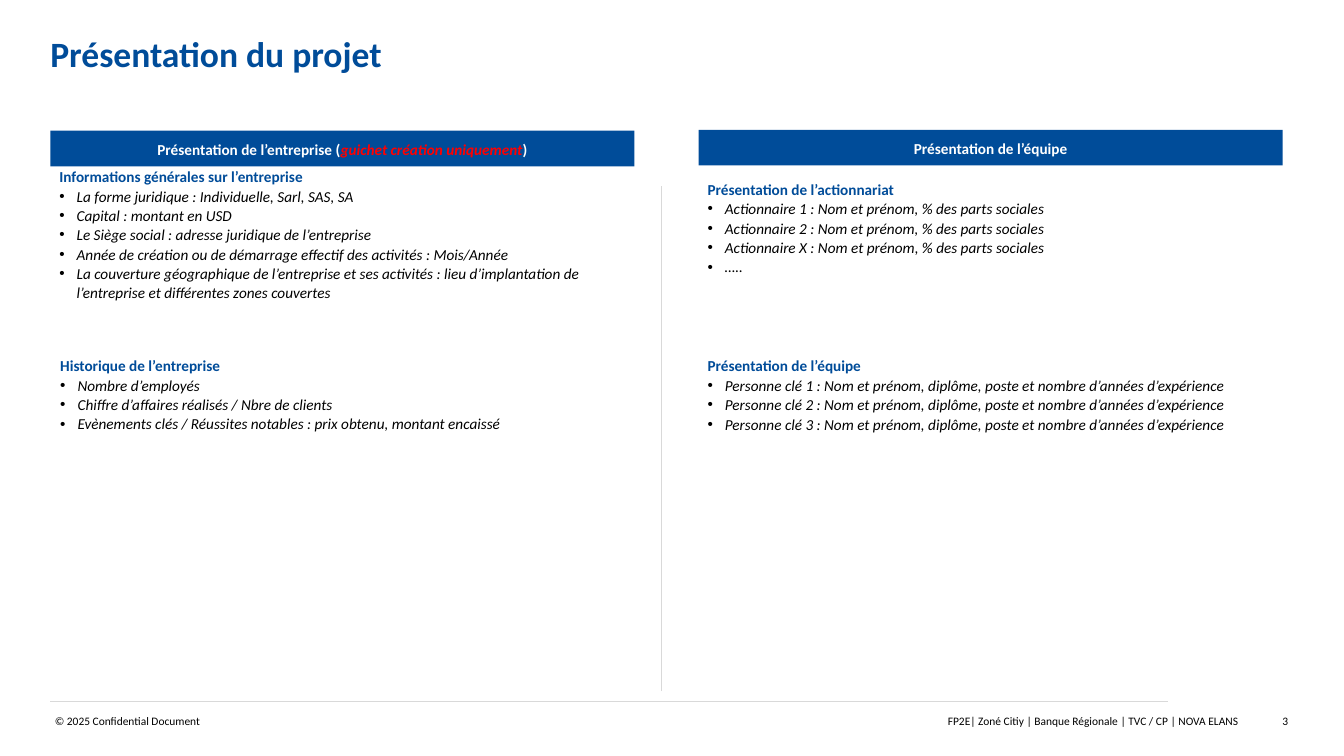
"""Build the project presentation slide: company on the left, team on the right."""
from lxml import etree
from pptx import Presentation
from pptx.dml.color import RGBColor
from pptx.enum import shapes, text
from pptx.oxml.ns import qn
from pptx.util import Inches, Pt

COLORS = {"blue": "004C99", "white": "FFFFFF", "red": "FF0000", "black": "000000", "gray": "D9D9D9"}
FONT = "Calibri"
LEFT, RIGHT, COLUMN_WIDTH = 0.55, 7.64, 6.39
LINE_SPACING = 1.06
BULLET_INDENT = 0.19

TITLE = "Présentation du projet"
HEADERS = [
    (LEFT, 1.43, [("Présentation de l’entreprise (", "white", False),
                  ("guichet création uniquement", "red", True),
                  (")", "white", False)]),
    (RIGHT, 1.42, [("Présentation de l’équipe", "white", False)]),
]
SECTIONS = [
    (LEFT, 1.82, COLUMN_WIDTH, 1.68, "Informations générales sur l’entreprise", [
        "La forme juridique : Individuelle, Sarl, SAS, SA",
        "Capital : montant en USD",
        "Le Siège social : adresse juridique de l’entreprise",
        "Année de création ou de démarrage effectif des activités : Mois/Année",
        "La couverture géographique de l’entreprise et ses activités : lieu d’implantation de "
        "l’entreprise et différentes zones couvertes",
    ]),
    (LEFT + 0.01, 3.89, COLUMN_WIDTH, 2.64, "Historique de l’entreprise", [
        "Nombre d’employés",
        "Chiffre d’affaires réalisés / Nbre de clients",
        "Evènements clés / Réussites notables : prix obtenu, montant encaissé",
    ]),
    (RIGHT, 3.89, 6.68, 2.09, "Présentation de l’équipe", [
        f"Personne clé {number} : Nom et prénom, diplôme, poste et nombre d’années d’expérience"
        for number in (1, 2, 3)
    ]),
    (RIGHT, 1.96, COLUMN_WIDTH, 1.47, "Présentation de l’actionnariat", [
        *(f"Actionnaire {name} : Nom et prénom, % des parts sociales" for name in (1, 2, "X")),
        "…..",
    ]),
]
FOOTERS = [
    (0.6, 6.46, "© 2025 Confidential Document", text.PP_ALIGN.LEFT),
    (RIGHT, 5.9, "FP2E| Zoné Citiy | Banque Régionale | TVC / CP | NOVA ELANS", text.PP_ALIGN.RIGHT),
    (13.72, 0.37, "3", text.PP_ALIGN.RIGHT),
]
RULES = [(LEFT, 7.67, 12.78, 7.67), (7.23, 7.56, 7.23, 2.03)]


def color(name):
    return RGBColor.from_string(COLORS[name])


def add_run(paragraph, words, size, color_name, bold=False, italic=False):
    run = paragraph.add_run()
    run.text = words
    run.font.name = FONT
    run.font.size = Pt(size)
    run.font.bold = bold
    run.font.italic = italic
    run.font.color.rgb = color(color_name)


def set_frame(shape, horizontal=0, vertical=0, anchor=text.MSO_ANCHOR.TOP):
    frame = shape.text_frame
    frame.word_wrap = True
    frame.auto_size = text.MSO_AUTO_SIZE.NONE
    frame.vertical_anchor = anchor
    frame.margin_left = frame.margin_right = Inches(horizontal)
    frame.margin_top = frame.margin_bottom = Inches(vertical)
    return frame


def add_text_box(slide, left, top, width, height, margin=0):
    box = slide.shapes.add_textbox(Inches(left), Inches(top), Inches(width), Inches(height))
    return set_frame(box, margin)


def add_bullet(paragraph):
    properties = paragraph._p.get_or_add_pPr()
    properties.set("marL", str(Inches(BULLET_INDENT)))
    properties.set("indent", str(-Inches(BULLET_INDENT)))
    etree.SubElement(properties, qn("a:buFont"), typeface="Arial")
    etree.SubElement(properties, qn("a:buChar"), char="•")


def add_header(slide, left, top, runs):
    bar = slide.shapes.add_shape(shapes.MSO_SHAPE.RECTANGLE, Inches(left), Inches(top),
                                 Inches(COLUMN_WIDTH), Inches(0.39))
    bar.shadow.inherit = False
    bar.fill.solid()
    bar.fill.fore_color.rgb = color("blue")
    bar.line.fill.background()
    paragraph = set_frame(bar, 0.04, 0.08, text.MSO_ANCHOR.MIDDLE).paragraphs[0]
    paragraph.alignment = text.PP_ALIGN.CENTER
    paragraph.line_spacing = LINE_SPACING
    for words, color_name, italic in runs:
        add_run(paragraph, words, 12, color_name, True, italic)


def add_section(slide, left, top, width, height, heading, items):
    frame = add_text_box(slide, left, top, width, height, 0.1)
    paragraph = frame.paragraphs[0]
    paragraph.line_spacing = LINE_SPACING
    add_run(paragraph, heading, 12, "blue", bold=True)
    for item in items:
        paragraph = frame.add_paragraph()
        add_bullet(paragraph)
        paragraph.line_spacing = LINE_SPACING
        add_run(paragraph, item, 12, "black", italic=True)


def add_rule(slide, *ends):
    rule = slide.shapes.add_connector(shapes.MSO_CONNECTOR.STRAIGHT, *map(Inches, ends))
    rule.line.color.rgb = color("gray")
    rule.line.width = Pt(0.75)
    etree.SubElement(rule._element.spPr, qn("a:effectLst"))


def main():
    presentation = Presentation()
    presentation.slide_width, presentation.slide_height = Inches(14.7), Inches(8.27)
    slide = presentation.slides.add_slide(presentation.slide_layouts[5])
    title = slide.shapes.title
    title.left, title.top, title.width, title.height = map(Inches, (LEFT, 0.35, 12.21, 0.47))
    paragraph = set_frame(title).paragraphs[0]
    paragraph.alignment = text.PP_ALIGN.LEFT
    add_run(paragraph, TITLE, 28, "blue", bold=True)
    for header in HEADERS:
        add_header(slide, *header)
    for section in SECTIONS:
        add_section(slide, *section)
    for rule in RULES:
        add_rule(slide, *rule)
    for left, width, words, alignment in FOOTERS:
        paragraph = add_text_box(slide, left, 7.81, width, 0.15).paragraphs[0]
        paragraph.alignment = alignment
        add_run(paragraph, words, 9, "black")
    presentation.save("out.pptx")


if __name__ == "__main__":
    main()
